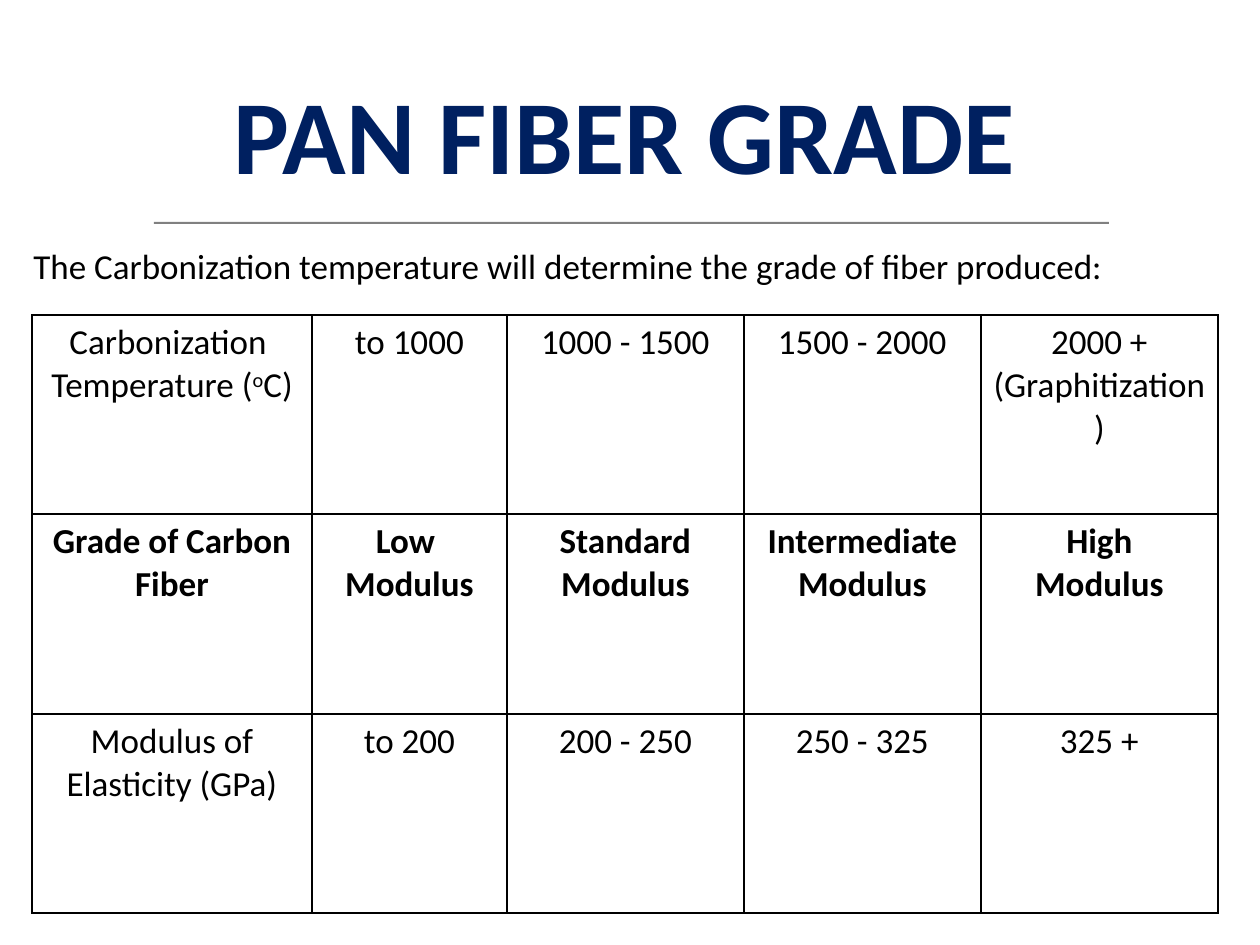
from lxml.etree import SubElement
from pptx import Presentation
from pptx.dml.color import RGBColor
from pptx.enum.shapes import MSO_SHAPE as Preset
from pptx.enum.text import MSO_ANCHOR as Anchor, PP_ALIGN as Align
from pptx.oxml.ns import qn
from pptx.util import Emu, Pt

EMU_PER_PX = 914400 / 126
FONT = "Calibri"
BLACK = RGBColor(0, 0, 0)
NAVY = RGBColor(0, 32, 96)
GRAY = RGBColor(128, 128, 128)

TITLE_FORMAT = {"name": FONT, "size": Pt(60), "bold": True}
BODY_FORMAT = {"name": FONT, "size": Pt(20), "bold": False}
GRADE_FORMAT = {**BODY_FORMAT, "bold": True}

COLUMN_WIDTHS = [280, 195, 237, 237, 237]
ROW_HEIGHTS = [199, 200, 199]
DEGREE = "o"
GRADE_ROW = 1
ROWS = [
    [["Carbonization ", ("Temperature (", DEGREE, "C)")], ["to 1000"],
     ["1000 - 1500"], ["1500 - 2000"], ["2000 +", "(Graphitization)"]],
    [["Grade of Carbon Fiber"], ["Low ", "Modulus"], ["Standard", "Modulus"],
     ["Intermediate", "Modulus"], ["High", "Modulus"]],
    [["Modulus of Elasticity (GPa)"], ["to 200"], ["200 - 250"],
     ["250 - 325"], ["325 +"]],
]


def px(length):
    return Emu(round(length * EMU_PER_PX))


def box(*lengths):
    return [px(length) for length in lengths]


def add_run(paragraph, text, text_format, color):
    run = paragraph.add_run()
    run.text = text
    for name, value in text_format.items():
        setattr(run.font, name, value)
    run.font.color.rgb = color
    return run


def add_rule(slide, place):
    rule = slide.shapes.add_shape(Preset.RECTANGLE, *box(*place))
    rule.shadow.inherit = False
    rule.fill.solid()
    rule.fill.fore_color.rgb = GRAY
    rule.line.fill.background()


def add_text(slide, place, text, text_format, color, align, anchor, spacing):
    frame = slide.shapes.add_textbox(*box(*place)).text_frame
    frame.word_wrap = True
    frame.vertical_anchor = anchor
    paragraph = frame.paragraphs[0]
    paragraph.alignment = align
    paragraph.line_spacing = spacing
    add_run(paragraph, text, text_format, color)


def set_borders(cell):
    properties = cell._tc.get_or_add_tcPr()
    for index, side in enumerate(("lnL", "lnR", "lnT", "lnB")):
        line = properties.makeelement(qn(f"a:{side}"), {"w": str(Pt(1))})
        fill = SubElement(line, qn("a:solidFill"))
        SubElement(fill, qn("a:srgbClr"), val=str(BLACK))
        properties.insert(index, line)


def fill_cell(cell, lines, text_format):
    cell.fill.background()
    set_borders(cell)
    frame = cell.text_frame
    for index, line in enumerate(lines):
        paragraph = frame.add_paragraph() if index else frame.paragraphs[0]
        paragraph.alignment = Align.CENTER
        parts = [line] if isinstance(line, str) else line
        for part in parts:
            run = add_run(paragraph, part, text_format, BLACK)
            if part == DEGREE:
                run.font._element.set("baseline", "30000")


def add_grade_table(slide, left, top):
    place = box(left, top, sum(COLUMN_WIDTHS), sum(ROW_HEIGHTS))
    table = slide.shapes.add_table(len(ROWS), len(COLUMN_WIDTHS), *place).table
    table.first_row = table.horz_banding = False
    for column, width in zip(table.columns, COLUMN_WIDTHS):
        column.width = px(width)
    for row, height in zip(table.rows, ROW_HEIGHTS):
        row.height = px(height)
    for row_index, row in enumerate(ROWS):
        text_format = GRADE_FORMAT if row_index == GRADE_ROW else BODY_FORMAT
        for column_index, lines in enumerate(row):
            fill_cell(table.cell(row_index, column_index), lines, text_format)


def main():
    presentation = Presentation()
    presentation.slide_width, presentation.slide_height = box(1260, 945)
    slide = presentation.slides.add_slide(presentation.slide_layouts[6])
    add_rule(slide, (154, 222, 955, 2))
    add_text(slide, (21, 63, 1207, 140), "PAN FIBER GRADE",
             TITLE_FORMAT, NAVY, Align.CENTER, Anchor.TOP, 1.0)
    add_text(slide, (21, 220, 1207, 69),
             "The Carbonization temperature will determine the grade of fiber produced:",
             BODY_FORMAT, BLACK, Align.JUSTIFY, Anchor.MIDDLE, 1.5)
    add_grade_table(slide, 32, 315)
    presentation.save("out.pptx")


if __name__ == "__main__":
    main()
